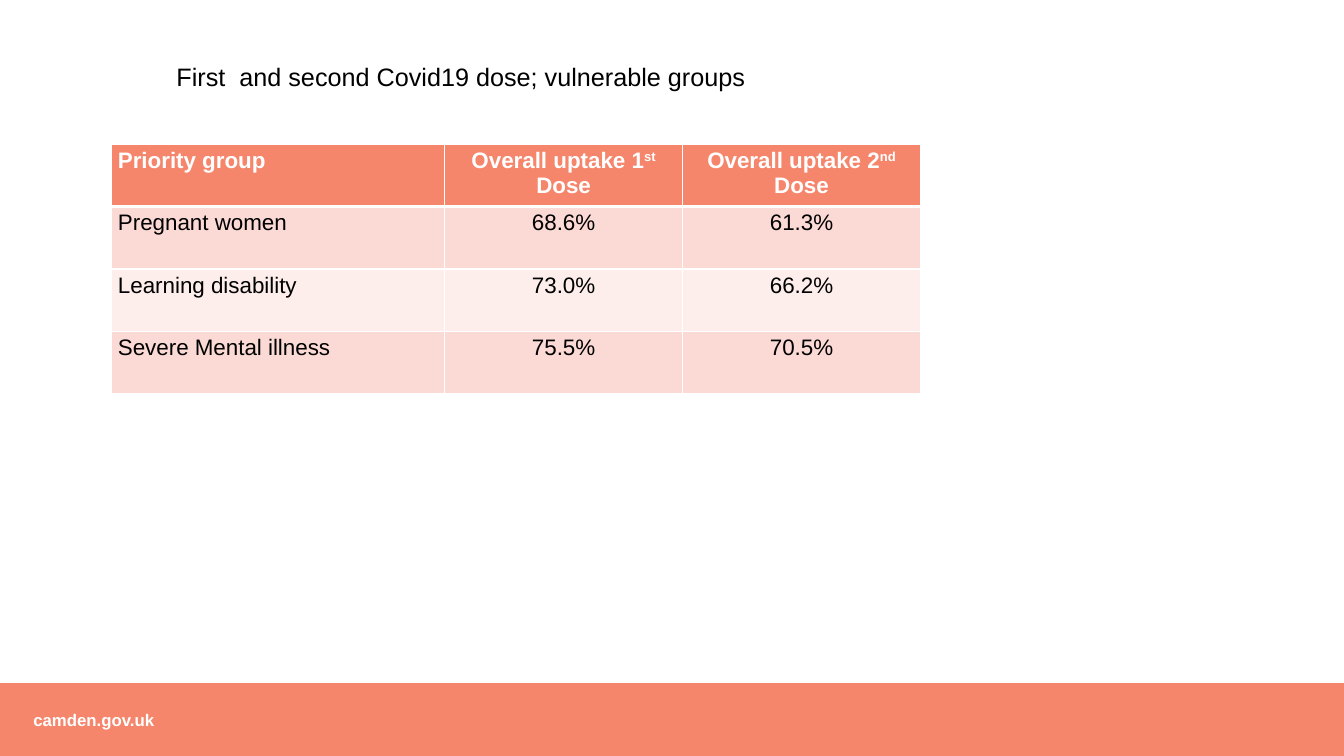
from lxml.etree import SubElement
from pptx import Presentation
from pptx.dml.color import RGBColor
from pptx.enum.shapes import MSO_SHAPE
from pptx.enum.text import MSO_ANCHOR, MSO_AUTO_SIZE, PP_ALIGN
from pptx.oxml.ns import qn
from pptx.util import Inches, Pt

TITLE = "First  and second Covid19 dose; vulnerable groups"
WEBSITE = "camden.gov.uk"
# Each cell is a list of runs; every second run is a superscript.
HEADER = [
    ["Priority group"],
    ["Overall uptake 1", "st", " Dose"],
    ["Overall uptake 2", "nd", " Dose"],
]
UPTAKE = [
    ("Pregnant women", "68.6%", "61.3%"),
    ("Learning disability", "73.0%", "66.2%"),
    ("Severe Mental illness", "75.5%", "70.5%"),
]
COLUMN_WIDTHS = [3.31, 2.36, 2.36]
ROW_HEIGHT = 0.62

CORAL = RGBColor(0xF5, 0x86, 0x6C)
BANDS = [RGBColor(0xFB, 0xD9, 0xD4), RGBColor(0xFD, 0xED, 0xEB)]
WHITE = RGBColor(0xFF, 0xFF, 0xFF)
BLACK = RGBColor(0, 0, 0)


def add_run(paragraph, text, size, color, bold=False):
    run = paragraph.add_run()
    run.text = text
    font = run.font
    font.name, font.size, font.bold = "Arial", Pt(size), bold
    font.color.rgb = color
    return run


def add_borders(cell, top, bottom):
    """White borders, with top and bottom widths in points; call before filling."""
    properties = cell._tc.get_or_add_tcPr()
    for side, width in (("L", 1), ("R", 1), ("T", top), ("B", bottom)):
        line = SubElement(properties, qn(f"a:ln{side}"), w=str(Pt(width)))
        fill = SubElement(line, qn("a:solidFill"))
        SubElement(fill, qn("a:srgbClr"), val=str(WHITE))


def add_footer(slide):
    band = slide.shapes.add_shape(
        MSO_SHAPE.RECTANGLE, 0, Inches(6.78), Inches(13.33), Inches(0.72))
    band.shadow.inherit = False
    band.fill.solid()
    band.fill.fore_color.rgb = CORAL
    band.line.color.rgb = CORAL
    band.line.width = Pt(0.75)

    website = slide.shapes.add_textbox(
        Inches(0.33), Inches(7.04), Inches(2.75), Inches(0.2)).text_frame
    website.word_wrap = True
    website.margin_left = website.margin_top = website.margin_bottom = 0
    website.margin_right = Inches(0.08)
    add_run(website.paragraphs[0], WEBSITE, 12, WHITE, bold=True)


def add_uptake_table(slide):
    rows = [HEADER] + [[[text] for text in row] for row in UPTAKE]
    table = slide.shapes.add_table(
        len(rows), len(COLUMN_WIDTHS), Inches(1.1), Inches(1.43),
        Inches(sum(COLUMN_WIDTHS)), Inches(ROW_HEIGHT * len(rows))).table
    for column, width in zip(table.columns, COLUMN_WIDTHS):
        column.width = Inches(width)

    for r, row in enumerate(rows):
        table.rows[r].height = Inches(ROW_HEIGHT)
        is_header = r == 0
        for c, runs in enumerate(row):
            cell = table.cell(r, c)
            add_borders(cell, top=3 if r == 1 else 1, bottom=3 if is_header else 1)
            cell.fill.solid()
            cell.fill.fore_color.rgb = CORAL if is_header else BANDS[(r - 1) % 2]
            cell.margin_left = cell.margin_right = Inches(0.07)
            cell.margin_top = cell.margin_bottom = Inches(0.04)
            paragraph = cell.text_frame.paragraphs[0]
            paragraph.alignment = PP_ALIGN.CENTER if c else PP_ALIGN.LEFT
            for i, text in enumerate(runs):
                run = add_run(paragraph, text, 16, WHITE if is_header else BLACK, is_header)
                if i % 2:
                    run.font._element.set("baseline", "30000")


def add_title(slide):
    title = slide.shapes.title
    title.left, title.top = Inches(1.65), Inches(0.56)
    title.width, title.height = Inches(5.97), Inches(0.4)
    frame = title.text_frame
    frame.word_wrap = True
    frame.auto_size = MSO_AUTO_SIZE.NONE
    frame.vertical_anchor = MSO_ANCHOR.TOP
    frame.paragraphs[0].alignment = PP_ALIGN.LEFT
    add_run(frame.paragraphs[0], TITLE, 18, BLACK)


def main():
    deck = Presentation()
    deck.slide_width, deck.slide_height = Inches(13.33), Inches(7.5)
    slide = deck.slides.add_slide(deck.slide_layouts[5])
    add_footer(slide)
    add_uptake_table(slide)
    add_title(slide)
    deck.save("out.pptx")


if __name__ == "__main__":
    main()
